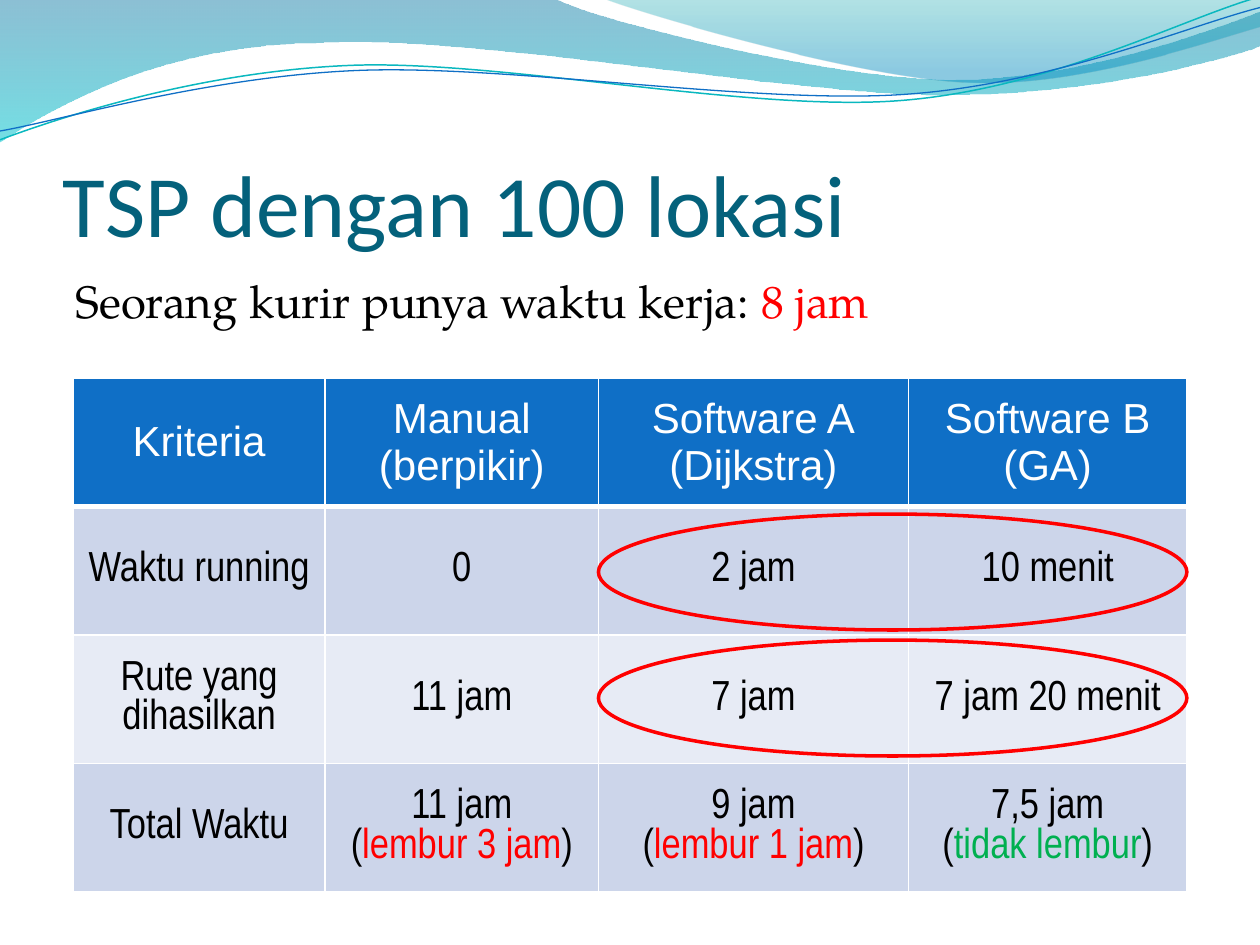
"""Builds a slide comparing travelling-salesman times for 100 locations."""
import dataclasses

import lxml.etree
import pptx
import pptx.dml.color
import pptx.enum.shapes
import pptx.enum.text
import pptx.oxml.ns
import pptx.util

Inches = pptx.util.Inches
Pt = pptx.util.Pt
qn = pptx.oxml.ns.qn


@dataclasses.dataclass(frozen=True)
class Theme:
    title: str = "04617B"
    ink: str = "000000"
    paper: str = "FFFFFF"
    header: str = "0F6FC6"
    bands: tuple = ("CCD5EA", "E7EBF5")
    teal: str = "0AB8BF"
    alert: str = "FF0000"
    good: str = "00B050"
    title_size: int = 50
    body_size: int = 26
    table_size: int = 24
    title_font: str = "Calibri"
    body_font: str = "TeX Gyre Pagella"
    header_font: str = "Arial"
    cell_font: str = "Arial Narrow"


def rgb(colour):
    return pptx.dml.color.RGBColor.from_string(colour)


def write_text(frame, paragraphs, font, size, colour, align=None, hanging=0):
    """Fill a frame; a paragraph is a string or a list of (text, colour) runs."""
    for index, content in enumerate(paragraphs):
        paragraph = frame.add_paragraph() if index else frame.paragraphs[0]
        paragraph.alignment = align
        if hanging:
            properties = paragraph._p.get_or_add_pPr()
            properties.set("marL", str(Inches(hanging)))
            properties.set("indent", str(-Inches(hanging)))
        runs = [(content, colour)] if isinstance(content, str) else content
        for text, run_colour in runs:
            run = paragraph.add_run()
            run.text = text
            run.font.name = font
            run.font.size = Pt(size)
            run.font.bold = False
            run.font.color.rgb = rgb(run_colour or colour)


class SlideBuilder:
    """Holds the theme and the current slide, with a method per element."""

    def __init__(self, slide, theme):
        self.shapes = slide.shapes
        self.theme = theme

    def text(self, box, paragraphs, anchor, insets=(0.1, 0.05, 0.1, 0.05), **style):
        frame = self.shapes.add_textbox(*map(Inches, box)).text_frame
        frame.word_wrap = True
        frame.vertical_anchor = anchor
        (frame.margin_left, frame.margin_top,
         frame.margin_right, frame.margin_bottom) = map(Inches, insets)
        write_text(frame, paragraphs, **style)

    def outline(self, start, segments, closed):
        """Draw lines (x, y) and cubic curves (x1, y1, x2, y2, x, y) from start."""
        builder = self.shapes.build_freeform(*map(Inches, start))
        for segment in segments:
            lengths = list(map(Inches, segment))
            builder.add_line_segments(list(zip(lengths[::2], lengths[1::2])), close=False)
        if closed:
            builder.add_line_segments([], close=True)
        shape = builder.convert_to_shape()
        shape.shadow.inherit = False
        strokes = iter(list(shape._element.iter(qn("a:lnTo"))))
        for segment in segments:
            parts = [next(strokes) for _ in segment[::2]]
            if len(parts) == 3:
                curve = lxml.etree.Element(qn("a:cubicBezTo"))
                parts[0].addprevious(curve)
                for part in parts:
                    curve.append(part[0])
                    part.getparent().remove(part)
        return shape

    def wave(self, start, segments, stops):
        shape = self.outline(start, segments, True)
        shape.line.fill.background()
        shape.fill.gradient()
        shape.fill.gradient_angle = 270
        for stop, (position, colour, opacity) in zip(shape.fill.gradient_stops, stops):
            stop.position = position
            stop.color.rgb = rgb(colour)
            tint = stop._gs.find(qn("a:srgbClr"))
            lxml.etree.SubElement(tint, qn("a:alpha")).set("val", str(opacity * 1000))

    def ribbon(self, start, segments, colour, width):
        shape = self.outline(start, segments, False)
        shape.fill.background()
        shape.line.color.rgb = rgb(colour)
        shape.line.width = Pt(width)

    def ring(self, box):
        shape = self.shapes.add_shape(
            pptx.enum.shapes.MSO_SHAPE.OVAL, *map(Inches, box))
        shape.shadow.inherit = False
        shape.fill.background()
        shape.line.color.rgb = rgb(self.theme.alert)
        shape.line.width = Pt(2)

    def border(self, cell, bottom):
        properties = cell._tc.get_or_add_tcPr()
        for side, width in (("L", 1), ("R", 1), ("T", 1), ("B", bottom)):
            line = lxml.etree.SubElement(properties, qn("a:ln" + side), w=str(Pt(width)))
            fill = lxml.etree.SubElement(line, qn("a:solidFill"))
            lxml.etree.SubElement(fill, qn("a:srgbClr"), val=self.theme.paper)

    def table(self, left, top, widths, row_height, columns):
        theme = self.theme
        row_count = len(columns[0])
        table = self.shapes.add_table(
            row_count, len(columns), Inches(left), Inches(top),
            Inches(sum(widths)), Inches(row_height * row_count)).table
        table.horz_banding = False
        for row in table.rows:
            row.height = Inches(row_height)
        for column, (width, entries) in enumerate(zip(widths, columns)):
            table.columns[column].width = Inches(width)
            for row, paragraphs in enumerate(entries):
                cell = table.cell(row, column)
                cell.vertical_anchor = pptx.enum.text.MSO_ANCHOR.MIDDLE
                self.border(cell, bottom=1 if row else 3)
                cell.fill.solid()
                cell.fill.fore_color.rgb = rgb(
                    theme.bands[(row - 1) % 2] if row else theme.header)
                write_text(cell.text_frame, paragraphs, size=theme.table_size,
                           font=theme.cell_font if row else theme.header_font,
                           colour=theme.ink if row else theme.paper,
                           align=pptx.enum.text.PP_ALIGN.CENTER)


def main():
    theme = Theme()
    deck = pptx.Presentation()
    deck.slide_width, deck.slide_height = Inches(10), Inches(7.5)
    page = SlideBuilder(deck.slides.add_slide(deck.slide_layouts[6]), theme)

    page.wave((0, -0.01), [
        (4.4, -0.01), (4.76, 0.17, 6.64, 0.63, 7.58, 0.63),
        (8.53, 0.63, 9.58, 0.26, 10, 0.09), (10.01, 0.36),
        (9.83, 0.44, 8.7, 0.76, 7.46, 0.75), (6.22, 0.75, 3.82, 0.28, 2.57, 0.34),
        (1.29, 0.35, 0.46, 0.83, -0.01, 1.13), (0, -0.01)],
        [(0, "0074A1", 45), (1, "00C6CF", 55)])
    page.wave((4.79, -0.01), [
        (5.09, 0.11, 6.82, 0.62, 7.69, 0.65), (8.56, 0.69, 9.61, 0.32, 10, 0.21),
        (10, 0), (4.79, -0.01)], [(0, "00A1A9", 30), (0.8, "008BBF", 45)])
    page.ribbon((0, 1.11), [
        (0.48, 0.93, 1.58, 0.57, 2.77, 0.52), (3.95, 0.47, 5.93, 0.89, 7.13, 0.8),
        (8.33, 0.71, 9.38, 0.15, 9.98, -0.02)], theme.teal, 0.85)
    page.ribbon((0, 1.04), [
        (0.47, 0.96, 1.64, 0.61, 2.83, 0.56), (4.03, 0.51, 5.97, 0.83, 7.17, 0.75),
        (8.36, 0.67, 9.41, 0.21, 10, 0.06)], theme.header, 0.75)

    page.text((0.5, 0.77, 9, 1.25), ["TSP dengan 100 lokasi"],
              pptx.enum.text.MSO_ANCHOR.BOTTOM, insets=(0, 0.05, 0, 0),
              font=theme.title_font, size=theme.title_size, colour=theme.title)
    page.text((0.5, 2.12, 9, 0.55),
              [[("Seorang kurir punya waktu kerja: ", None), ("8 jam", theme.alert)]],
              pptx.enum.text.MSO_ANCHOR.TOP, hanging=0.3,
              font=theme.body_font, size=theme.body_size, colour=theme.ink)

    def total(time, remark, colour):
        return [time, [("(", None), (remark, colour), (")", None)]]

    criteria = [["Kriteria"], ["Waktu running"], ["Rute yang dihasilkan"], ["Total Waktu"]]
    manual = [["Manual", "(berpikir)"], ["0"], ["11 jam"],
              total("11 jam", "lembur 3 jam", theme.alert)]
    dijkstra = [["Software A", "(Dijkstra)"], ["2 jam"], ["7 jam"],
                total("9 jam", "lembur 1 jam", theme.alert)]
    genetic = [["Software B", "(GA)"], ["10 menit"], ["7 jam 20 menit"],
               total("7,5 jam", "tidak lembur", theme.good)]
    left, top, row_height = 0.58, 3, 1.02
    for widths, columns in (([2, 2.17], [criteria, manual]),
                            ([2.46], [dijkstra]), ([2.21], [genetic])):
        page.table(left, top, widths, row_height, columns)
        left += sum(widths)
    for ring_top in (5.08, 4.08):
        page.ring((4.75, ring_top, 4.67, 0.92))

    deck.save("out.pptx")


if __name__ == "__main__":
    main()
